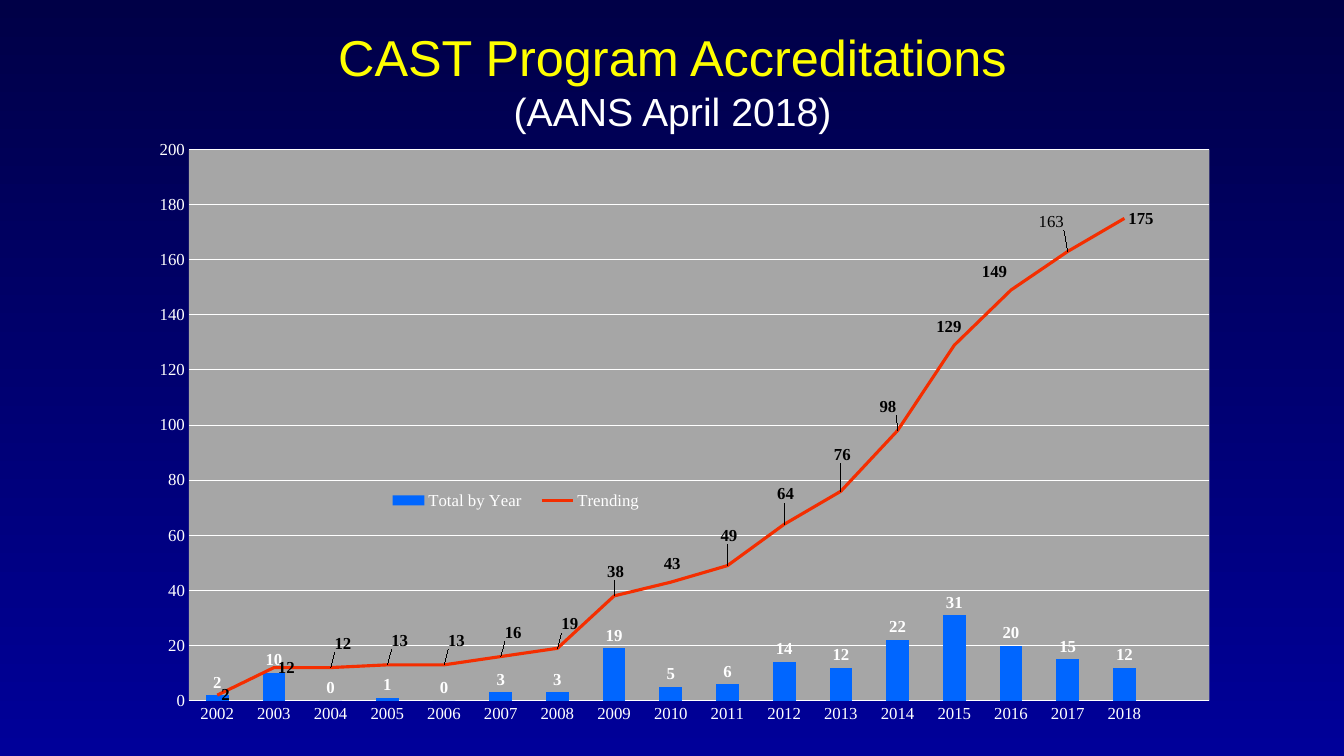
import pptx
import pptx.chart.data
import pptx.dml.color
import pptx.enum.chart
import pptx.enum.text
import pptx.oxml
import pptx.oxml.ns
import pptx.util

Inches = pptx.util.Inches
Pt = pptx.util.Pt
qn = pptx.oxml.ns.qn

CHART_NS = 'xmlns:c="http://schemas.openxmlformats.org/drawingml/2006/chart"'
DRAWING_NS = 'xmlns:a="http://schemas.openxmlformats.org/drawingml/2006/main"'
YEARS = [str(year) for year in range(2002, 2019)] + [""]
TOTALS = [2, 10, 0, 1, 0, 3, 3, 19, 5, 6, 14, 12, 22, 31, 20, 15, 12, None]
TREND = [2, 12, 12, 13, 13, 16, 19, 38, 43, 49, 64, 76, 98, 129, 149, 163, 175, None]
FIRST_SHIFTED = 2
LABEL_SHIFTS = [
    (0, -0.04), (0, -0.04), (0, -0.04), (0, -0.04), (0, -0.04),
    (-0.01, -0.04), (-0.01, -0.03), (-0.01, -0.05), (-0.01, -0.05),
    (-0.01, -0.06), (-0.02, -0.04), (-0.02, -0.03), (-0.03, -0.03), (-0.03, -0.05),
]


def color(value):
    """Return the RGB colour for a hex string."""
    return pptx.dml.color.RGBColor.from_string(value)


def style_font(font, size, value, name, bold=False):
    """Set size, colour, typeface and weight of a font."""
    font.size = Pt(size)
    font.color.rgb = color(value)
    font.name = name
    font.bold = bold


def style_line(line, value, width):
    """Give a line a solid colour and a width in points."""
    line.color.rgb = color(value)
    line.width = Pt(width)


def set_layout(parent, index, **settings):
    """Place a manual layout at the given child index of a chart element."""
    for old in parent.findall(qn("c:layout")):
        parent.remove(old)
    parts = "".join(f'<c:{key} val="{value}"/>' for key, value in settings.items())
    parent.insert(index, pptx.oxml.parse_xml(
        f"<c:layout {CHART_NS}><c:manualLayout>{parts}</c:manualLayout></c:layout>"))


def move_to_line_plot(chart):
    """Turn the second column series into a line on the same axes."""
    bars = chart.plots[0]._element
    trend = bars.findall(qn("c:ser"))[1]
    axes = "".join(f'<c:axId val="{axis.get("val")}"/>' for axis in bars.findall(qn("c:axId")))
    lines = pptx.oxml.parse_xml(
        f'<c:lineChart {CHART_NS}><c:grouping val="standard"/>'
        f'<c:varyColors val="0"/><c:marker val="1"/>{axes}</c:lineChart>')
    for flag in trend.findall(qn("c:invertIfNegative")):
        trend.remove(flag)
    lines.insert(2, trend)
    bars.addnext(lines)


def style_axes(chart):
    """Format both axes and the gridlines."""
    for axis in (chart.category_axis, chart.value_axis):
        axis.major_tick_mark = pptx.enum.chart.XL_TICK_MARK.NONE
        axis.minor_tick_mark = pptx.enum.chart.XL_TICK_MARK.NONE
        style_font(axis.tick_labels.font, 12, "FFFFFF", "Times New Roman")
    style_line(chart.category_axis.format.line, "FFFFFF", 0.75)
    values = chart.value_axis
    values.minimum_scale, values.maximum_scale, values.major_unit = 0, 200, 20
    values.format.line.fill.background()
    values.has_major_gridlines = True
    style_line(values.major_gridlines.format.line, "FFFFFF", 0.75)


def label_series(series, value, position):
    """Show bold values beside the points of a series."""
    labels = series.data_labels
    labels.show_value = True
    labels.position = position
    style_font(labels.font, 12, value, "Times New Roman", True)


def style_columns(plot):
    """Format the yearly totals."""
    plot.gap_width = 150
    plot.vary_by_categories = False
    totals = plot.series[0]
    totals.format.fill.solid()
    totals.format.fill.fore_color.rgb = color("0066FF")
    label_series(totals, "FFFFFF", pptx.enum.chart.XL_LABEL_POSITION.OUTSIDE_END)


def style_trend(plot):
    """Format the trend line and shift its labels."""
    trend = plot.series[0]
    trend.smooth = False
    trend.marker.style = pptx.enum.chart.XL_MARKER_STYLE.NONE
    style_line(trend.format.line, "F42E00", 2.25)
    right = pptx.enum.chart.XL_LABEL_POSITION.RIGHT
    label_series(trend, "000000", right)
    for index, (x, y) in enumerate(LABEL_SHIFTS, FIRST_SHIFTED):
        label = trend.points[index].data_label
        label.position = right
        style_font(label.font, 12, "000000", "Times New Roman", YEARS[index] != "2017")
        set_layout(label._get_or_add_dLbl(), 1, x=x, y=y)


def add_legend(chart):
    """Put the legend inside the plot, left of the rising line."""
    chart.has_legend = True
    legend = chart.legend
    legend.position = pptx.enum.chart.XL_LEGEND_POSITION.BOTTOM
    legend.include_in_layout = False
    style_font(legend.font, 12, "FFFFFF", "Times New Roman")
    set_layout(legend._element, 1, xMode="edge", yMode="edge", x=0.23, y=0.6, w=0.25, h=0.04)


def add_accreditation_chart(page, left, top, width, height):
    """Add the combined column and line chart in the given box."""
    data = pptx.chart.data.CategoryChartData()
    data.categories = YEARS
    data.add_series("Total by Year", TOTALS)
    data.add_series("Trending", TREND)
    chart = page.shapes.add_chart(
        pptx.enum.chart.XL_CHART_TYPE.COLUMN_CLUSTERED,
        Inches(left), Inches(top), Inches(width), Inches(height), data).chart
    chart.has_title = False
    style_font(chart.font, 10, "FFFFFF", "Times New Roman")
    move_to_line_plot(chart)
    style_axes(chart)
    style_columns(chart.plots[0])
    style_trend(chart.plots[1])
    add_legend(chart)
    area = chart.plots[0]._element.getparent()
    set_layout(area, 0, layoutTarget="inner", xMode="edge", yMode="edge",
               x=0.058, y=0.039, w=0.927, h=0.913)
    area.append(pptx.oxml.parse_xml(
        f'<c:spPr {CHART_NS} {DRAWING_NS}><a:solidFill><a:srgbClr val="A6A6A6"/>'
        '</a:solidFill><a:ln><a:noFill/></a:ln></c:spPr>'))


def fill_title(page, left, top, width, height):
    """Write the two-line heading into the title placeholder."""
    box = page.shapes.title
    box.left, box.top = Inches(left), Inches(top)
    box.width, box.height = Inches(width), Inches(height)
    frame = box.text_frame
    frame.word_wrap = True
    frame.auto_size = pptx.enum.text.MSO_AUTO_SIZE.NONE
    frame.vertical_anchor = pptx.enum.text.MSO_ANCHOR.MIDDLE
    para = frame.paragraphs[0]
    para.alignment = pptx.enum.text.PP_ALIGN.CENTER
    span = para.add_run()
    span.text = "CAST Program Accreditations"
    style_font(span.font, 36, "FFFF00", "Arial")
    para.add_line_break()
    span = para.add_run()
    span.text = "(AANS April 2018)"
    style_font(span.font, 28, "FFFFFF", "Arial")


def paint_background(page):
    """Fill the page with a vertical blue gradient."""
    fill = page.background.fill
    fill.gradient()
    fill.gradient_angle = 270
    for stop, value in zip(fill.gradient_stops, ("000047", "000099")):
        stop.color.rgb = color(value)


def main():
    """Build and save the deck."""
    deck = pptx.Presentation()
    deck.slide_width, deck.slide_height = Inches(13.33), Inches(7.5)
    page = deck.slides.add_slide(deck.slide_layouts[5])
    paint_background(page)
    fill_title(page, 1.89, 0.17, 9.56, 1.25)
    add_accreditation_chart(page, 1.24, 1.25, 10.92, 5.99)
    deck.save("out.pptx")


if __name__ == "__main__":
    main()
